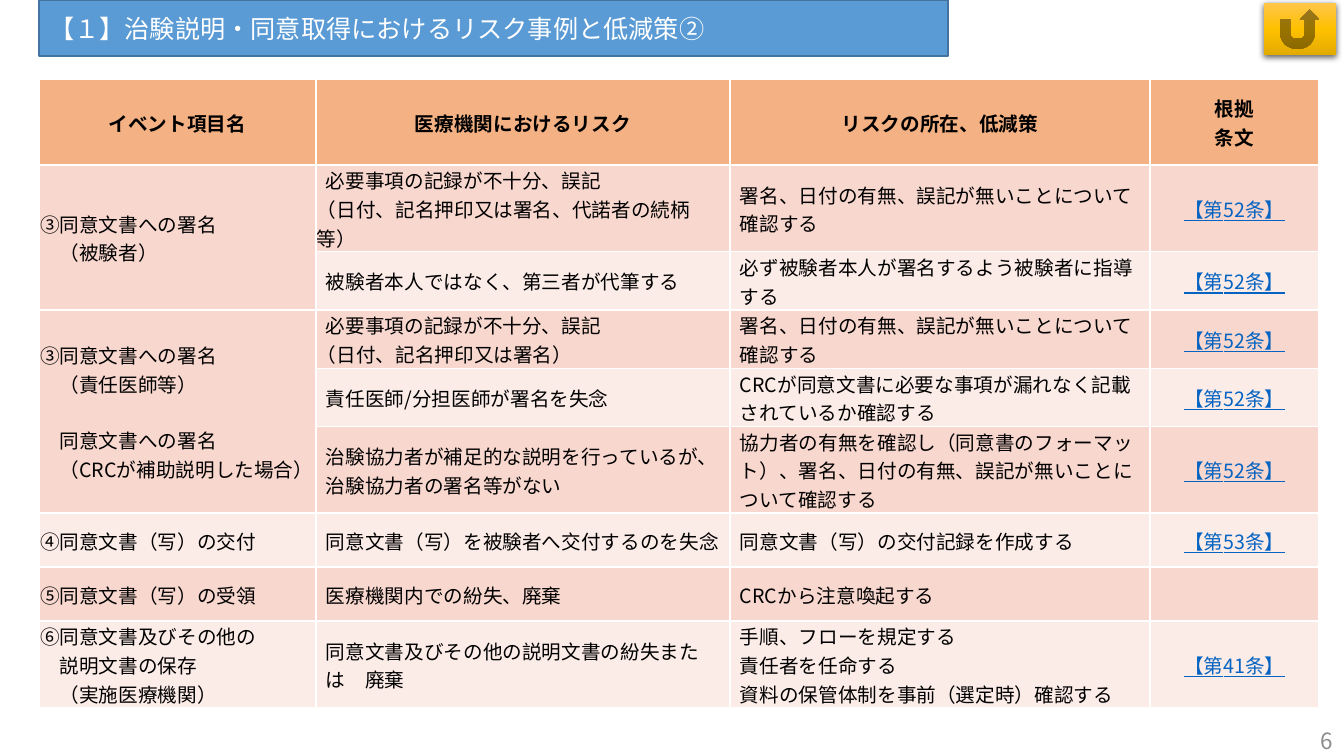
from copy import deepcopy
from lxml.etree import SubElement
from pptx import Presentation
from pptx.dml.color import RGBColor
from pptx.enum.shapes import MSO_SHAPE
from pptx.enum.text import MSO_ANCHOR, MSO_AUTO_SIZE, PP_ALIGN
from pptx.oxml import parse_xml
from pptx.oxml.ns import nsdecls, qn
from pptx.util import Pt

PX = 914400 / 100.8
FONT = "Noto Sans CJK JP"
BLACK = RGBColor(0x00, 0x00, 0x00)
WHITE = RGBColor(0xFF, 0xFF, 0xFF)
GRAY = RGBColor(0x8C, 0x8C, 0x8C)
BLUE = RGBColor(0x5B, 0x9B, 0xD5)
NAVY = RGBColor(0x43, 0x73, 0x9E)
LINK = RGBColor(0x05, 0x63, 0xC1)
HEAD = RGBColor(0xF4, 0xB1, 0x83)
DARK = RGBColor(0xF8, 0xD7, 0xCE)
PALE = RGBColor(0xFC, 0xEC, 0xE8)
GOLD = [RGBColor(0xFF, 0xC6, 0x4B), RGBColor(0xFF, 0xC0, 0x00),
        RGBColor(0xE3, 0xAB, 0x00)]


def px(*nums):
    return [round(n * PX) for n in nums]


def style(para, size, color, align=PP_ALIGN.LEFT):
    para.alignment = align
    font = para.font
    font.size, font.name = Pt(size), FONT
    font.color.rgb = color
    props = para._p.pPr.find(qn("a:defRPr"))
    SubElement(props, qn("a:ea")).set("typeface", FONT)


deck = Presentation()
deck.slide_width, deck.slide_height = px(1344, 756)
slide = deck.slides.add_slide(deck.slide_layouts[5])
shapes = slide.shapes

# Title bar
title = shapes.title
title.left, title.top, title.width, title.height = px(39, 0, 909, 56)
title.fill.solid()
title.fill.fore_color.rgb = BLUE
title.line.color.rgb = NAVY
title.line.width = Pt(1)
frame = title.text_frame
frame.text = "【１】治験説明・同意取得におけるリスク事例と低減策②"
frame.auto_size = MSO_AUTO_SIZE.NONE
frame.vertical_anchor = MSO_ANCHOR.MIDDLE
style(frame.paragraphs[0], 18, WHITE)

# Table contents: None marks a cell merged into the one above
ROWS = [
    ["イベント項目名", "医療機関におけるリスク", "リスクの所在、低減策", "根拠\n条文"],
    ["③同意文書への署名\n　（被験者）",
     "必要事項の記録が不十分、誤記\n（日付、記名押印又は署名、代諾者の続柄等）",
     "署名、日付の有無、誤記が無いことについて確認する", "【第52条】"],
    [None, "被験者本人ではなく、第三者が代筆する",
     "必ず被験者本人が署名するよう被験者に指導する", "【第52条】"],
    ["③同意文書への署名\n　（責任医師等）\n　同意文書への署名\n　（CRCが補助説明した場合）",
     "必要事項の記録が不十分、誤記\n（日付、記名押印又は署名）",
     "署名、日付の有無、誤記が無いことについて確認する", "【第52条】"],
    [None, "責任医師/分担医師が署名を失念",
     "CRCが同意文書に必要な事項が漏れなく記載されているか確認する", "【第52条】"],
    [None, "治験協力者が補足的な説明を行っているが、治験協力者の署名等がない",
     "協力者の有無を確認し（同意書のフォーマット）、署名、日付の有無、誤記が無いことについて確認する",
     "【第52条】"],
    ["④同意文書（写）の交付", "同意文書（写）を被験者へ交付するのを失念",
     "同意文書（写）の交付記録を作成する", "【第53条】"],
    ["⑤同意文書（写）の受領", "医療機関内での紛失、廃棄", "CRCから注意喚起する", ""],
    ["⑥同意文書及びその他の\n　説明文書の保存\n　（実施医療機関）",
     "同意文書及びその他の説明文書の紛失または　廃棄",
     "手順、フローを規定する\v責任者を任命する\v資料の保管体制を事前（選定時）確認する",
     "【第41条】"],
]
WIDE = [277, 414, 420, 169]
HIGH = [86, 54, 54, 54, 54, 81, 54, 54, 76]

# Table
table = shapes.add_table(len(ROWS), len(WIDE),
                         *px(39, 79, sum(WIDE), sum(HIGH))).table
table.horz_banding = False
for col, width in zip(table.columns, px(*WIDE)):
    col.width = width
for row, height in zip(table.rows, px(*HIGH)):
    row.height = height

for r, texts in enumerate(ROWS):
    for c, text in enumerate(texts):
        cell = table.cell(r, c)
        cell.fill.solid()
        cell.fill.fore_color.rgb = HEAD if r == 0 else DARK if r % 2 else PALE
        cell.vertical_anchor = MSO_ANCHOR.MIDDLE
        cell.margin_left, cell.margin_top, cell.margin_right, cell.margin_bottom = px(1, 1, 1, 0)
        if text is None:
            continue
        cell.text = text
        link = r > 0 and c == 3
        mid = r == 0 or c == 3
        for n, para in enumerate(cell.text_frame.paragraphs):
            style(para, 14, LINK if link else BLACK,
                  PP_ALIGN.CENTER if mid else PP_ALIGN.LEFT)
            para.font.bold = r == 0
            para.font.underline = link
            if n == 0 and r > 0 and c in (1, 2):
                para._p.pPr.set("marL", str(px(9)[0]))

# Merged event names, with a gap before the second event
for top, end in [(1, 2), (3, 5)]:
    table.cell(top, 0).merge(table.cell(end, 0))
table.cell(3, 0).text_frame.paragraphs[2].space_before = Pt(20)

# Return button
button = shapes.add_shape(MSO_SHAPE.ACTION_BUTTON_RETURN, *px(1264, 3, 72, 52))
button.line.fill.background()
button.fill.gradient()
button.fill.gradient_angle = 270
stops = button._element.spPr.find(".//" + qn("a:gsLst"))
stops.append(deepcopy(stops[-1]))
for n, stop in enumerate(button.fill.gradient_stops):
    stop.position = n / 2
    stop.color.rgb = GOLD[n]
button.shadow.inherit = False
button._element.spPr.find(qn("a:effectLst")).append(parse_xml(
    f'<a:outerShdw {nsdecls("a")} blurRad="57150" dist="19050" dir="5400000"'
    ' algn="ctr" rotWithShape="0"><a:srgbClr val="000000">'
    '<a:alpha val="63000"/></a:srgbClr></a:outerShdw>'))

# Page number
page = shapes.add_textbox(*px(1041, 721, 302, 40)).text_frame
page.word_wrap = True
page.vertical_anchor = MSO_ANCHOR.MIDDLE
page.text = "6"
style(page.paragraphs[0], 16, GRAY, PP_ALIGN.RIGHT)

deck.save("out.pptx")
